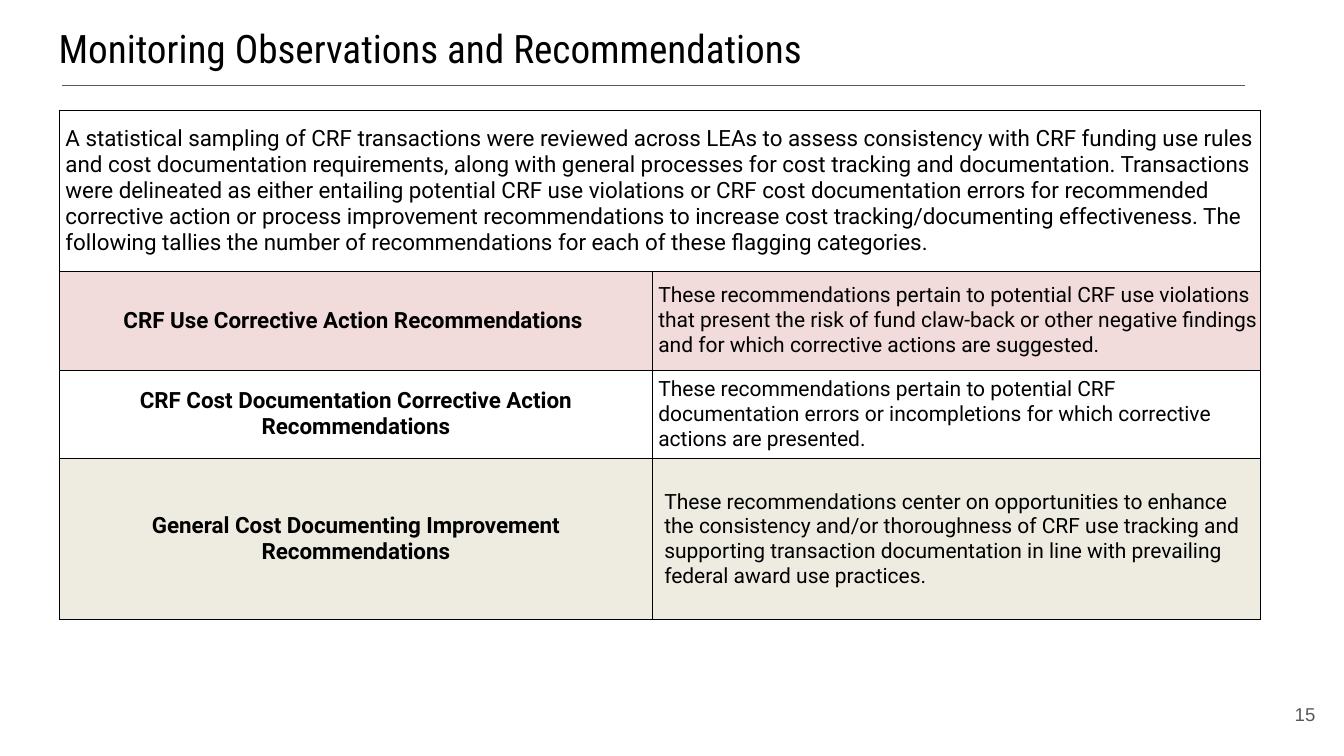
from dataclasses import dataclass

from lxml.etree import SubElement
from pptx import Presentation
from pptx.dml.color import RGBColor
from pptx.enum.shapes import MSO_CONNECTOR
from pptx.enum.text import MSO_ANCHOR, PP_ALIGN
from pptx.oxml.ns import qn
from pptx.util import Cm, Pt


@dataclass(frozen=True)
class Theme:
    black: str = "000000"
    gray: str = "595959"
    white: str = "FFFFFF"
    pink: str = "F2DCDB"
    sand: str = "EEECE1"
    head: str = "Roboto Condensed"
    body: str = "Roboto"
    foot: str = "Arial"
    title_size: float = 28
    label_size: float = 16
    note_size: float = 15
    foot_size: float = 13.3
    edge: float = 0.5
    rule: float = 0.75


THEME = Theme()
COLS = (14.94, 15.32)
ROWS = (4.06, 2.49, 2.24, 4.04)
INDENT = 0.15

INTRO = (
    "A statistical sampling of CRF transactions were reviewed across LEAs to assess "
    "consistency with CRF funding use rules and cost documentation requirements, along "
    "with general processes for cost tracking and documentation. Transactions were "
    "delineated as either entailing potential CRF use violations or CRF cost "
    "documentation errors for recommended corrective action or process improvement "
    "recommendations to increase cost tracking/documenting effectiveness. The following "
    "tallies the number of recommendations for each of these flagging categories."
)
# Label, note, fill, note indent
GROUPS = (
    ("CRF Use Corrective Action Recommendations ",
     "These recommendations pertain to potential CRF use violations that present the "
     "risk of fund claw-back or other negative findings and for which corrective "
     "actions are suggested.", THEME.pink, INDENT),
    ("CRF Cost Documentation Corrective Action Recommendations",
     "These recommendations pertain to potential CRF documentation errors or "
     "incompletions for which corrective actions are presented.", THEME.white, INDENT),
    ("General Cost Documenting Improvement Recommendations",
     "These recommendations center on opportunities to enhance the consistency and/or "
     "thoroughness of CRF use tracking and supporting transaction documentation in "
     "line with prevailing federal award use practices.", THEME.sand, 2 * INDENT),
)


def add_run(para, text, size, face, color=THEME.black, bold=False):
    run = para.add_run()
    run.text = text
    font = run.font
    font.size, font.name, font.bold = Pt(size), face, bold
    font.color.rgb = RGBColor.from_string(color)


def set_pad(item, pad):
    item.margin_left = item.margin_right = Cm(pad)
    item.margin_top = item.margin_bottom = Cm(pad)


def add_text(slide, box, pad, anchor, align, *style):
    frame = slide.shapes.add_textbox(*map(Cm, box)).text_frame
    frame.word_wrap = True
    frame.vertical_anchor = anchor
    set_pad(frame, pad)
    para = frame.paragraphs[0]
    para.alignment = align
    add_run(para, *style)


def add_rule(slide, left, right, top):
    line = slide.shapes.add_connector(
        MSO_CONNECTOR.STRAIGHT, Cm(left), Cm(top), Cm(right), Cm(top))
    line.line.color.rgb = RGBColor.from_string(THEME.gray)
    line.line.width = Pt(THEME.rule)
    SubElement(line._element.spPr, qn("a:effectLst"))


def add_edges(cell):
    props = cell._tc.get_or_add_tcPr()
    for side in ("lnL", "lnR", "lnT", "lnB"):
        edge = SubElement(props, qn(f"a:{side}"), w=str(Pt(THEME.edge)))
        fill = SubElement(edge, qn("a:solidFill"))
        SubElement(fill, qn("a:srgbClr"), val=THEME.black)


def style_cell(cell, fill):
    set_pad(cell, 0)
    cell.vertical_anchor = MSO_ANCHOR.MIDDLE
    add_edges(cell)
    cell.fill.solid()
    cell.fill.fore_color.rgb = RGBColor.from_string(fill)


def add_label(cell, text):
    para = cell.text_frame.paragraphs[0]
    para.alignment = PP_ALIGN.CENTER
    add_run(para, text, THEME.label_size, THEME.body, bold=True)


def add_note(cell, text, size, indent):
    para = cell.text_frame.paragraphs[0]
    props = para._p.get_or_add_pPr()
    props.set("marL", str(Cm(indent)))
    props.set("indent", "0")
    add_run(para, text, size, THEME.body)


def add_grid(slide, left, top):
    table = slide.shapes.add_table(
        len(ROWS), len(COLS), Cm(left), Cm(top), Cm(sum(COLS)), Cm(sum(ROWS))).table
    table.first_row = table.horz_banding = False
    for col, width in zip(table.columns, COLS):
        col.width = Cm(width)
    fills = (THEME.white, *(group[2] for group in GROUPS))
    for row, height, fill in zip(table.rows, ROWS, fills):
        row.height = Cm(height)
        for cell in row.cells:
            style_cell(cell, fill)
    table.cell(0, 0).merge(table.cell(0, 1))
    add_note(table.cell(0, 0), INTRO, THEME.label_size, INDENT)
    for row, (label, note, _, indent) in enumerate(GROUPS, 1):
        add_label(table.cell(row, 0), label)
        add_note(table.cell(row, 1), note, THEME.note_size, indent)


def main():
    deck = Presentation()
    deck.slide_width, deck.slide_height = Cm(33.87), Cm(19.05)
    slide = deck.slides.add_slide(deck.slide_layouts[6])
    add_text(slide, (1.14, 0.28, 31.55, 2.13), 0.34, MSO_ANCHOR.TOP, PP_ALIGN.LEFT,
             "Monitoring Observations and Recommendations", THEME.title_size, THEME.head)
    add_rule(slide, 1.55, 31.37, 2.16)
    add_text(slide, (31.37, 17.27, 2.03, 1.45), 0.25, MSO_ANCHOR.MIDDLE, PP_ALIGN.RIGHT,
             "15", THEME.foot_size, THEME.foot, THEME.gray)
    add_grid(slide, 1.5, 2.77)
    deck.save("out.pptx")


if __name__ == "__main__":
    main()
